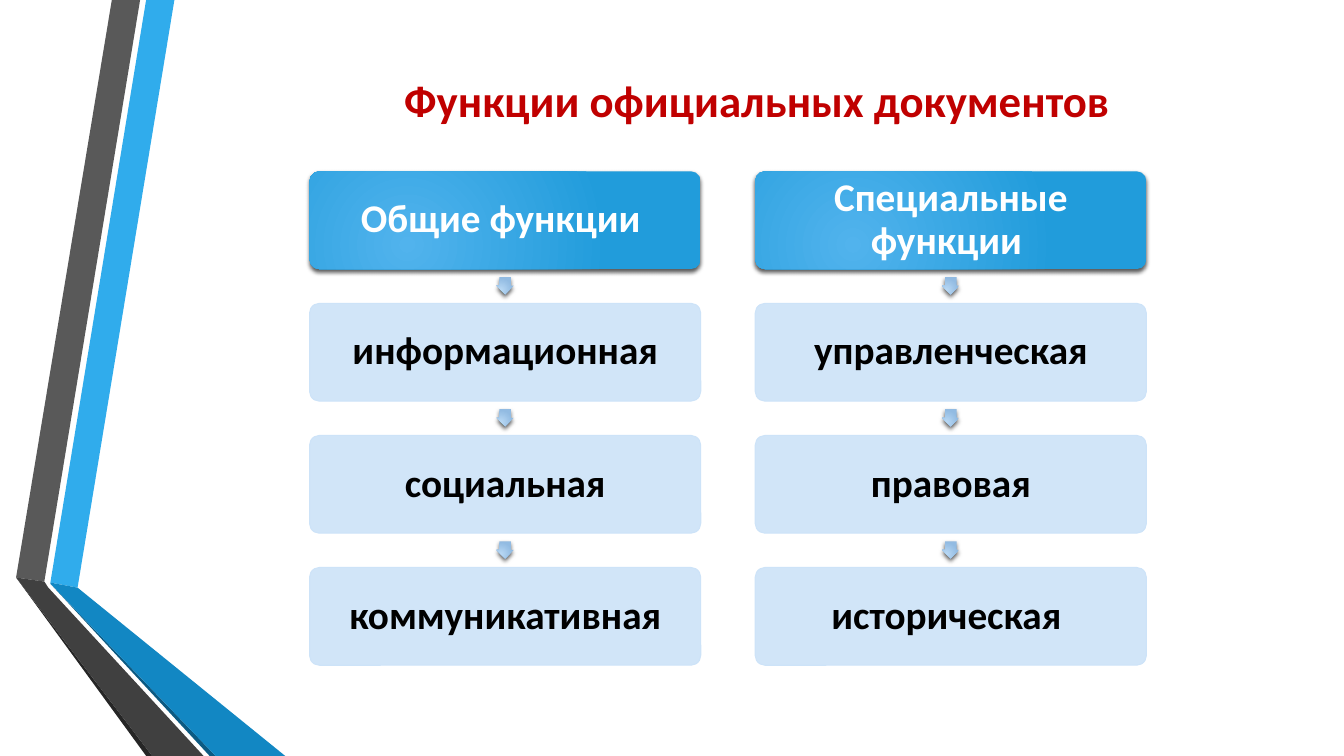
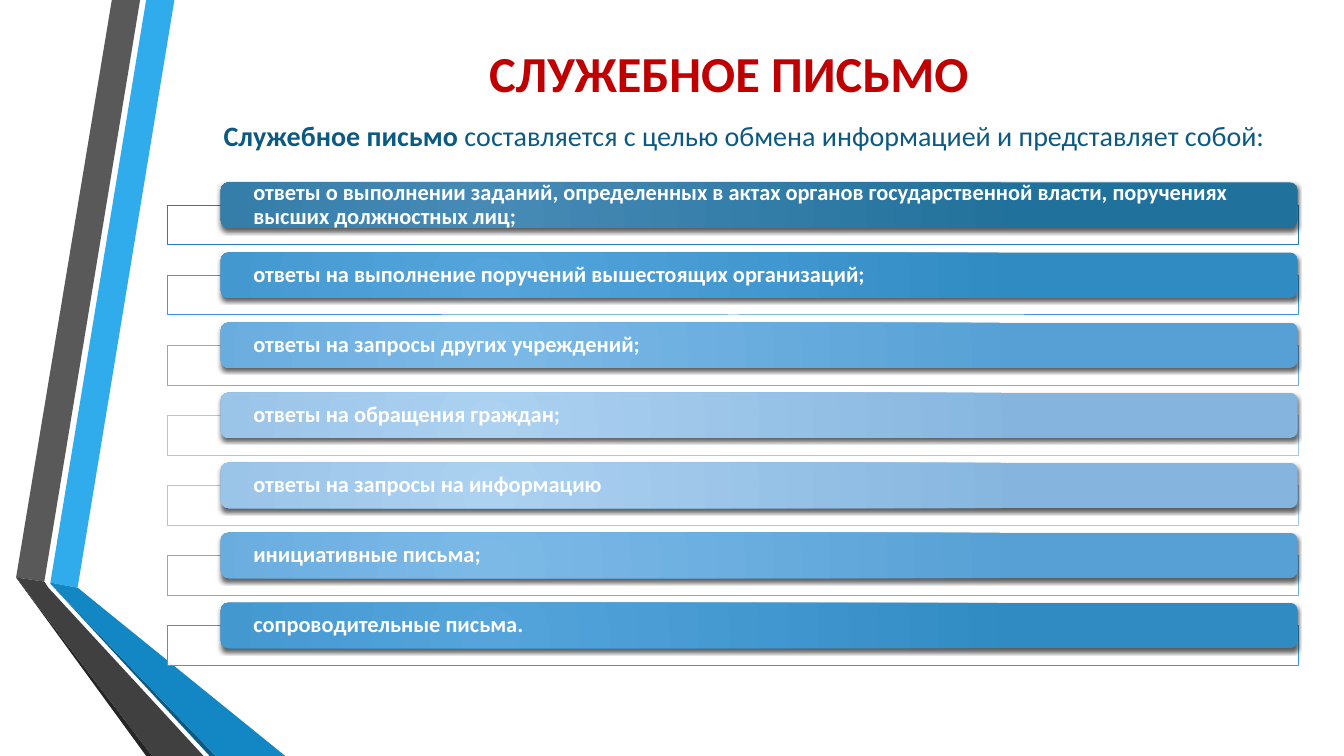
from lxml import etree
from pptx import Presentation
from pptx.dml.color import RGBColor
from pptx.enum.shapes import MSO_SHAPE as SHAPE
from pptx.enum.text import MSO_ANCHOR as ANCHOR, PP_ALIGN as ALIGN
from pptx.oxml.ns import qn
from pptx.util import Inches, Pt

FONT = "Calibri"
RED, NAVY, WHITE, BLACK, PALE = "C00000", "0C5A82", "FFFFFF", "000000", "CDE3F8"


def paint(shape, fill, line=None, alpha=None, shadow=False):
    """Fill with one hex colour, or with a radial gradient for a pair of them."""
    shape.shadow.inherit = False
    props = shape._element.spPr
    if isinstance(fill, tuple):
        shape.fill.gradient()
        for stop, color, pos in zip(shape.fill.gradient_stops, fill, (0, 1)):
            stop.color.rgb = RGBColor.from_string(color)
            stop.position = pos
        grad = props.find(qn("a:gradFill"))
        grad.remove(grad.find(qn("a:lin")))
        radial = etree.SubElement(grad, qn("a:path"), path="circle")
        etree.SubElement(radial, qn("a:fillToRect"),
                         l="50000", t="100000", r="100000", b="50000")
    else:
        shape.fill.solid()
        shape.fill.fore_color.rgb = RGBColor.from_string(fill)
        if alpha:
            color = props.find(qn("a:solidFill"))[0]
            etree.SubElement(color, qn("a:alpha"), val=str(alpha * 1000))
    if line:
        shape.line.color.rgb = RGBColor.from_string(line)
        shape.line.width = Pt(0.75)
    else:
        shape.line.fill.background()
    if shadow:
        outer = etree.SubElement(props.find(qn("a:effectLst")), qn("a:outerShdw"),
                                 blurRad=str(Pt(3)), dist=str(Pt(2)),
                                 dir="5400000", rotWithShape="0")
        color = etree.SubElement(outer, qn("a:srgbClr"), val=BLACK)
        etree.SubElement(color, qn("a:alpha"), val="64000")


def write(shape, text, size, color, bold=True, align=ALIGN.CENTER,
          anchor=ANCHOR.MIDDLE, inset=(0.1, 0.05), spacing=1.0):
    """Add a run to the first paragraph of the shape."""
    tf = shape.text_frame
    tf.word_wrap = True
    tf.vertical_anchor = anchor
    tf.margin_left = tf.margin_right = Inches(inset[0])
    tf.margin_top = tf.margin_bottom = Inches(inset[1])
    p = tf.paragraphs[0]
    p.alignment = align
    p.line_spacing = spacing
    r = p.add_run()
    r.text = text
    r.font.name = FONT
    r.font.size = Pt(size)
    r.font.bold = bold
    r.font.color.rgb = RGBColor.from_string(color)


prs = Presentation()
prs.slide_width, prs.slide_height = Inches(13.33), Inches(7.5)

# Side ribbons and title, shared by both slides
RIBBONS = [
    ("30ACEC", [(0.5, 5.78), (0.77, 5.83), (1.73, 0), (1.45, 0)]),
    ("595959", [(1.39, 0), (1.11, 0), (0.16, 5.73), (0.44, 5.77)]),
    ("262626", [(0.16, 5.73), (1.45, 7.5), (1.51, 7.5)]),
    (NAVY, [(0.5, 5.79), (2.08, 7.5), (2.14, 7.5)]),
    ("1287C3", [(0.5, 5.79), (2.14, 7.5), (2.83, 7.5), (0.77, 5.83), (0.5, 5.78)]),
    ("404040", [(2.02, 7.5), (0.48, 5.83), (0.44, 5.77), (0.16, 5.73), (1.51, 7.5)]),
]
TITLES = [
    ("Функции официальных документов", 32, (2.03, 0.36, 10.96, 1.25)),
    ("СЛУЖЕБНОЕ ПИСЬМО", 36, (1.75, 0.2, 10.96, 1.03)),
]
for title, size, box in TITLES:
    s = prs.slides.add_slide(prs.slide_layouts[6])
    for color, points in RIBBONS:
        corners = [(Inches(x), Inches(y)) for x, y in points]
        outline = s.shapes.build_freeform(*corners[0])
        outline.add_line_segments(corners[1:], close=True)
        paint(outline.convert_to_shape(), color)
    write(s.shapes.add_textbox(*map(Inches, box)), title, size, RED)

functions_slide, letter_slide = prs.slides

# Slide 1: two columns of boxes joined by arrows
COLUMNS = [
    ["Общие функции ", "информационная", "социальная", "коммуникативная"],
    ["Специальные функции ", "управленческая", "правовая", "историческая "],
]
BOX_W, BOX_H, ARROW = 3.88, 0.97, 0.17
shapes = functions_slide.shapes
for col, labels in enumerate(COLUMNS):
    left = 3.07 + 4.42 * col
    for row, label in enumerate(labels):
        top = 1.7 + 1.31 * row
        box = shapes.add_shape(SHAPE.ROUNDED_RECTANGLE, Inches(left), Inches(top),
                               Inches(BOX_W), Inches(BOX_H))
        box.adjustments[0] = 0.1
        if row == 0:
            paint(box, ("51B3ED", "219CDB"), shadow=True)
        else:
            paint(box, PALE, line=PALE, alpha=90)
        write(box, label, 28, BLACK if row else WHITE, inset=(0.04, 0.04), spacing=0.9)
        if row < len(labels) - 1:
            arrow = shapes.add_shape(SHAPE.RIGHT_ARROW,
                                     Inches(left + (BOX_W - ARROW) / 2), Inches(top + 1.05),
                                     Inches(ARROW), Inches(ARROW))
            arrow.rotation = 90
            arrow.adjustments[0] = 0.67
            paint(arrow, ("B9D9F5", "92BBE2"), shadow=True)

# Slide 2: introduction and a list of bars over outlined frames
shapes = letter_slide.shapes
intro = shapes.add_textbox(Inches(2.12), Inches(1.13), Inches(10.8), Inches(0.44))
for text, bold in [("Служебное письмо ", True),
                   ("составляется с целью обмена информацией и представляет собой:", False)]:
    write(intro, text, 20, NAVY, bold=bold, align=ALIGN.LEFT, anchor=ANCHOR.TOP)

# Frame line, then the two gradient colours of the bar
DEEP = "247FAF", ("478AB6", "20719B")
STRONG = "389CD9", ("55A4DC", "308BC3")
MEDIUM = "6BB2E5", ("7CB9E7", "56A0D5")
LIGHT = "A0CBF0", ("ACD1F1", "85B5DE")
LETTERS = [
    ("ответы о выполнении заданий, определенных в актах органов государственной "
     "власти, поручениях высших должностных лиц;", DEEP),
    ("ответы на выполнение поручений вышестоящих организаций;", STRONG),
    ("ответы на запросы других учреждений;", MEDIUM),
    ("ответы на обращения граждан;", LIGHT),
    ("ответы на запросы на информацию", LIGHT),
    ("инициативные письма;", MEDIUM),
    ("сопроводительные письма.", STRONG),
]
FIRST_TOP, LAST_TOP = 1.81, 5.98
step = (LAST_TOP - FIRST_TOP) / (len(LETTERS) - 1)
for i, (text, (line, gradient)) in enumerate(LETTERS):
    top = FIRST_TOP + step * i
    frame = shapes.add_shape(SHAPE.RECTANGLE, Inches(1.66), Inches(top + 0.23),
                             Inches(11.22), Inches(0.39))
    paint(frame, WHITE, line=line, alpha=90)
    bar = shapes.add_shape(SHAPE.ROUNDED_RECTANGLE, Inches(2.19), Inches(top),
                           Inches(10.68), Inches(0.45))
    paint(bar, gradient, shadow=True)
    write(bar, text, 16, WHITE, align=ALIGN.LEFT, inset=(0.3, 0), spacing=0.9)

prs.save("out.pptx")
